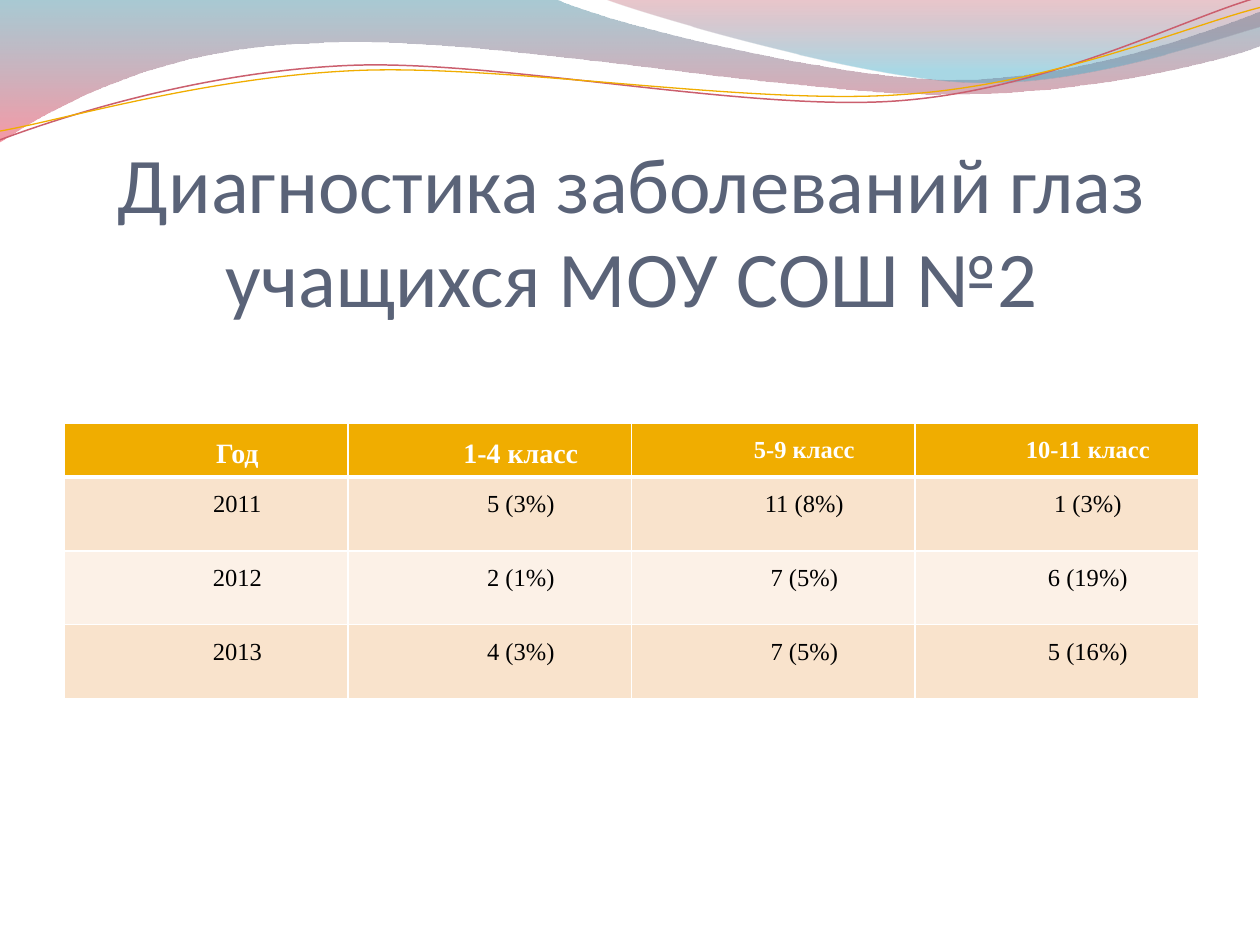
import math

import pptx
import pptx.dml.color
import pptx.enum.text
import pptx.oxml
import pptx.oxml.ns
import pptx.util

Pt = pptx.util.Pt
qn = pptx.oxml.ns.qn
NAMESPACE = pptx.oxml.ns.nsdecls("a")
ALIGN = pptx.enum.text.PP_ALIGN


def colour(hex_code):
    return pptx.dml.color.RGBColor.from_string(hex_code)


def write_text(frame, text, font, size, hex_code, bold=False,
               align=ALIGN.CENTER, spacing=None, indent=None):
    para = frame.paragraphs[0]
    para.alignment = align
    if spacing:
        para.line_spacing = spacing
    if indent:
        properties = para._p.get_or_add_pPr()
        properties.set("marL", "0")
        properties.set("indent", str(Pt(indent)))
    span = para.add_run()
    span.text = text
    span.font.name = font
    span.font.size = Pt(size)
    span.font.bold = bold
    span.font.color.rgb = colour(hex_code)


def turn(point, centre, degrees):
    angle = math.radians(degrees)
    x, y = point[0] - centre[0], point[1] - centre[1]
    return (centre[0] + x * math.cos(angle) - y * math.sin(angle),
            centre[1] + x * math.sin(angle) + y * math.cos(angle))


class SlideBuilder:
    heading_font = "Calibri"
    table_font = "Times New Roman"
    heading_colour = "5A6378"
    accent = "F0AD00"
    bands = ("F9E3CC", "FCF1E7")
    border = "FFFFFF"
    tilt = -2.7

    def __init__(self, deck):
        self.page = deck.slides.add_slide(deck.slide_layouts[5])

    def outline(self, start, segments, close):
        """Draw segments of one point (a line) or three points (a Bezier curve)."""
        builder = self.page.shapes.build_freeform(Pt(start[0]), Pt(start[1]))
        builder.add_line_segments(
            [(Pt(x), Pt(y)) for segment in segments for x, y in segment], close=close)
        shape = builder.convert_to_shape()
        shape.shadow.inherit = False
        lines = iter(list(shape._element.iter(qn("a:lnTo"))))
        for segment in segments:
            steps = [next(lines) for _ in segment]
            if len(steps) == 3:
                curve = pptx.oxml.parse_xml(f"<a:cubicBezTo {NAMESPACE}/>")
                steps[0].addprevious(curve)
                for step in steps:
                    curve.append(step[0])
                    step.getparent().remove(step)
        return shape

    def wave(self, start, segments, stops):
        shape = self.outline(start, segments, True)
        shape.line.fill.background()
        shape.fill.gradient()
        shape.fill.gradient_angle = 270
        for stop, (position, hex_code, opacity) in zip(shape.fill.gradient_stops, stops):
            stop.position = position
            stop.color.rgb = colour(hex_code)
            stop._gs.find(qn("a:srgbClr")).append(pptx.oxml.parse_xml(
                f'<a:alpha {NAMESPACE} val="{opacity * 1000}"/>'))

    def ribbon(self, start, segments, centre, hex_code, width):
        level = [[turn(point, centre, -self.tilt) for point in segment]
                 for segment in segments]
        shape = self.outline(turn(start, centre, -self.tilt), level, False)
        shape.rotation = self.tilt
        shape.fill.background()
        shape.line.color.rgb = colour(hex_code)
        shape.line.width = Pt(width)

    def title(self, text, left, top, width, height):
        box = self.page.shapes.title
        box.left, box.top, box.width, box.height = map(Pt, (left, top, width, height))
        frame = box.text_frame
        frame.word_wrap = True
        frame.auto_size = pptx.enum.text.MSO_AUTO_SIZE.NONE
        frame.vertical_anchor = pptx.enum.text.MSO_ANCHOR.BOTTOM
        frame.margin_left = frame.margin_right = frame.margin_bottom = 0
        frame.margin_top = Pt(3.6)
        write_text(frame, text, self.heading_font, 45, self.heading_colour)

    def cell_borders(self, cell, top, bottom):
        properties = cell._tc.get_or_add_tcPr()
        sides = (("lnL", 1), ("lnR", 1), ("lnT", top), ("lnB", bottom))
        for index, (side, width) in enumerate(sides):
            properties.insert(index, pptx.oxml.parse_xml(
                f'<a:{side} {NAMESPACE} w="{Pt(width)}"><a:solidFill>'
                f'<a:srgbClr val="{self.border}"/></a:solidFill></a:{side}>'))

    def table(self, rows, header_sizes, left, top, width, heights):
        grid = self.page.shapes.add_table(
            len(rows), len(rows[0]), Pt(left), Pt(top), Pt(width), Pt(sum(heights))).table
        for row, height in zip(grid.rows, heights):
            row.height = Pt(height)
        for r, values in enumerate(rows):
            header = r == 0
            for c, value in enumerate(values):
                cell = grid.cell(r, c)
                cell.margin_left = cell.margin_right = Pt(5)
                cell.margin_top = cell.margin_bottom = 0
                cell.fill.solid()
                cell.fill.fore_color.rgb = colour(
                    self.accent if header else self.bands[(r - 1) % 2])
                # The heavier rule separates the header from the data
                self.cell_borders(cell, 3 if r == 1 else 1, 3 if header else 1)
                write_text(cell.text_frame, value, self.table_font,
                           header_sizes[c] if header else 14,
                           "FFFFFF" if header else "000000",
                           bold=header, spacing=1.5, indent=35.4)


def main():
    deck = pptx.Presentation()
    deck.slide_width, deck.slide_height = Pt(720), Pt(540)
    slide = SlideBuilder(deck)

    # Gradient waves along the top edge
    slide.wave((0, 0), [
        [(317, -0.7)],
        [(342.7, 12.2), (478, 45.4), (545.8, 45.4)],
        [(614.2, 45.4), (689.8, 18.7), (720, 6.5)],
        [(720.7, 25.9)],
        [(707.8, 31.7), (626.4, 54.7), (537.1, 54)],
        [(447.8, 54), (275, 20.2), (185, 24.5)],
        [(92.9, 25.9), (33.1, 59.8), (-0.7, 81.4)],
    ], [(0, "3F8A9F", 45), (1, "EF445B", 55)])
    slide.wave((344.9, -0.7), [
        [(366.5, 7.9), (491, 44.6), (553.7, 46.8)],
        [(616.3, 49.7), (691.9, 23), (720, 15.1)],
        [(720, 0)],
    ], [(0, "B84253", 30), (0.8, "42ABC7", 45)])

    # Thin tilted ribbons below the waves
    slide.ribbon((0, 79.9), [
        [(34.6, 67), (113.8, 41), (199.4, 37.4)],
        [(284.4, 33.8), (427, 64.1), (513.4, 57.6)],
        [(599.8, 51.1), (675.4, 10.8), (718.6, -1.4)],
    ], (359.3, 41.4), "CB5F6E", 0.85)
    slide.ribbon((0, 74.9), [
        [(33.8, 69.1), (118.1, 43.9), (203.8, 40.3)],
        [(290.2, 36.7), (429.8, 60.5), (516.2, 54)],
        [(601.9, 48.2), (677.5, 15.1), (720, 4.3)],
    ], (359.6, 42.5), slide.accent, 0.75)

    # Title and table of results by year
    slide.title("Диагностика заболеваний глаз учащихся МОУ СОШ №2", 36.9, 77, 648, 108)
    slide.table([
        ("Год", "1-4 класс", "5-9 класс", "10-11 класс"),
        ("2011", "5 (3%)", "11 (8%)", "1 (3%)"),
        ("2012", "2 (1%)", "7 (5%)", "6 (19%)"),
        ("2013", "4 (3%)", "7 (5%)", "5 (16%)"),
    ], (16, 16, 14, 14), 36.9, 241.9, 648, (30.7, 42.2, 42.2, 42.2))

    deck.save("out.pptx")


if __name__ == "__main__":
    main()
